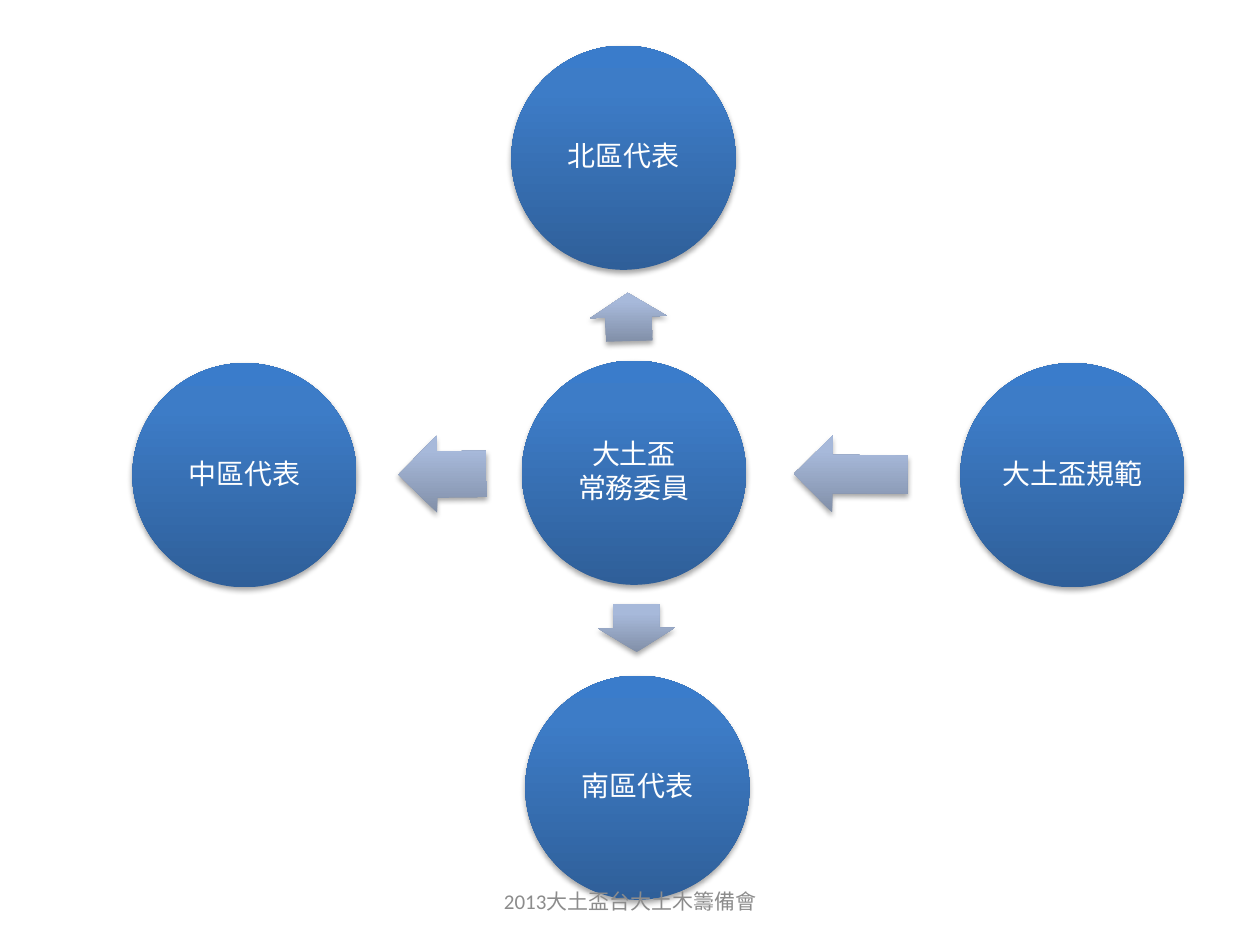
from lxml import etree
from pptx import Presentation
from pptx import util as u
from pptx.dml.color import RGBColor
from pptx.enum import shapes, text
from pptx.oxml import parse_xml
from pptx.oxml.ns import nsdecls, qn

WHITE = RGBColor(0xFF, 0xFF, 0xFF)
GRAY = RGBColor(0x8C, 0x8C, 0x8C)
BLACK = RGBColor(0, 0, 0)
# Gradient colours from bottom to top
BLUES = (RGBColor(0x2F, 0x5F, 0x99), RGBColor(0x3D, 0x7C, 0xC7), RGBColor(0x3A, 0x7C, 0xCB))
PALE_BLUES = (RGBColor(0x81, 0x8F, 0xA8), RGBColor(0xA7, 0xB9, 0xDA), RGBColor(0xA7, 0xBA, 0xDC))
STOPS = (0, 80, 100)

CIRCLES = [  # centre x, centre y, lines
    (12.78, 9.53, ["大土盃", "常務委員"]),
    (12.57, 3.18, ["北區代表"]),
    (21.62, 9.58, ["大土盃規範"]),
    (12.85, 15.88, ["南區代表"]),
    (4.93, 9.58, ["中區代表"]),
]
RIGHT, LEFT = shapes.MSO_SHAPE.RIGHT_ARROW, shapes.MSO_SHAPE.LEFT_ARROW
ARROWS = [  # preset, centre x, centre y, length, rotation, shaft share
    (RIGHT, 12.67, 6.39, 0.97, 268.2, 0.6),
    (LEFT, 17.15, 9.56, 2.29, 0.4, 0.5),
    (RIGHT, 12.83, 12.66, 0.97, 89.4, 0.6),
    (RIGHT, 8.92, 9.56, 1.78, 179.5, 0.6),
]


class Diagram:
    """Holds the slide and the shared look of its elements."""

    diameter = 4.52
    arrow_width = 1.55
    cjk_font = "Noto Sans CJK SC"

    def __init__(self, slide):
        self.slide = slide

    def shape(self, preset, cx, cy, w, h, colors):
        """Add a shaded, shadowed shape centred on a point."""
        s = self.slide.shapes.add_shape(
            preset, u.Cm(cx - w / 2), u.Cm(cy - h / 2), u.Cm(w), u.Cm(h))
        s.line.fill.background()
        s.shadow.inherit = False
        props = s.element.spPr
        stops = "".join(
            f'<a:gs pos="{pos * 1000}"><a:srgbClr val="{color}"/></a:gs>'
            for pos, color in zip(STOPS, colors))
        props.find(qn("a:prstGeom")).addnext(parse_xml(
            f'<a:gradFill {nsdecls("a")} rotWithShape="0"><a:gsLst>{stops}</a:gsLst>'
            '<a:lin ang="16200000" scaled="0"/></a:gradFill>'))
        props.find(qn("a:effectLst")).append(parse_xml(
            f'<a:outerShdw {nsdecls("a")} blurRad="{u.Pt(3.1)}" dist="{u.Pt(1.8)}" '
            f'dir="5400000" rotWithShape="0"><a:srgbClr val="{BLACK}">'
            '<a:alpha val="35000"/></a:srgbClr></a:outerShdw>'))
        return s

    def style(self, p, size, color, latin):
        p.alignment = text.PP_ALIGN.CENTER
        p.font.size = u.Pt(size)
        p.font.color.rgb = color
        p.font.name = latin
        latin_tag = p.font._element.find(qn("a:latin"))
        east_asian = etree.Element(qn("a:ea"), typeface=self.cjk_font)
        latin_tag.addnext(east_asian)

    def circle(self, cx, cy, lines):
        s = self.shape(shapes.MSO_SHAPE.OVAL, cx, cy, self.diameter, self.diameter, BLUES)
        tf = s.text_frame
        tf.word_wrap = True
        tf.vertical_anchor = text.MSO_ANCHOR.MIDDLE
        tf.margin_left = tf.margin_right = tf.margin_top = tf.margin_bottom = u.Cm(0.05)
        tf.text = "\n".join(lines)
        for p in tf.paragraphs:
            p.line_spacing = 0.9
            p.space_after = u.Pt(2)
            self.style(p, 16, WHITE, self.cjk_font)

    def arrow(self, preset, cx, cy, length, rotation, shaft):
        s = self.shape(preset, cx, cy, length, self.arrow_width, PALE_BLUES)
        s.adjustments[0] = shaft
        s.adjustments[1] = 0.5
        s.rotation = rotation

    def footer(self, words):
        s = self.slide.shapes.add_textbox(u.Cm(8.68), u.Cm(17.65), u.Cm(8.05), u.Cm(1.02))
        tf = s.text_frame
        tf.word_wrap = True
        tf.vertical_anchor = text.MSO_ANCHOR.MIDDLE
        tf.text = words
        self.style(tf.paragraphs[0], 12, GRAY, "Calibri")


def main():
    prs = Presentation()
    prs.slide_width, prs.slide_height = u.Cm(25.4), u.Cm(19.05)
    diagram = Diagram(prs.slides.add_slide(prs.slide_layouts[6]))
    for circle in CIRCLES:
        diagram.circle(*circle)
    for arrow in ARROWS:
        diagram.arrow(*arrow)
    diagram.footer("2013大土盃台大土木籌備會")
    prs.save("out.pptx")


if __name__ == "__main__":
    main()
